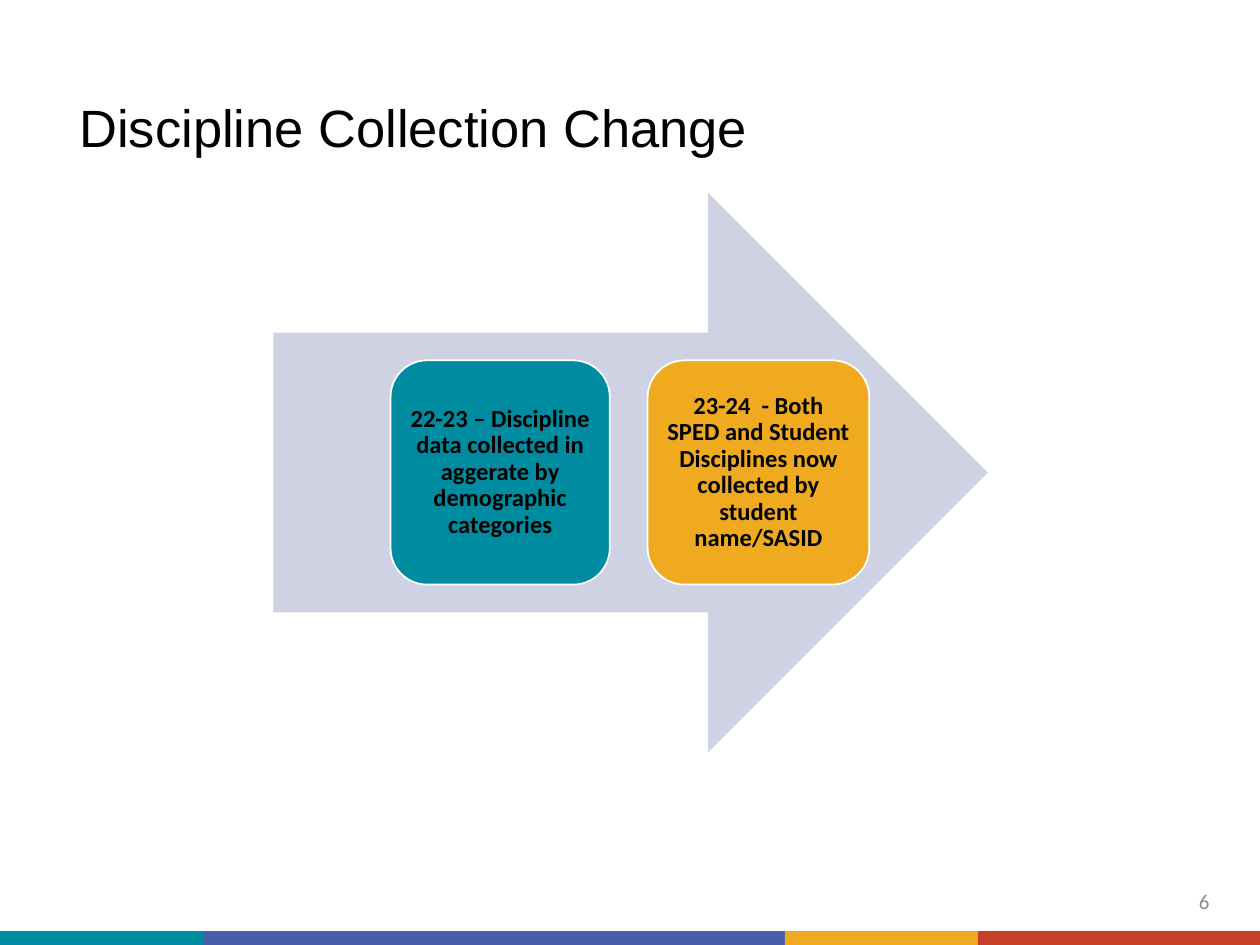
from pptx import Presentation
from pptx import util as u
from pptx.dml.color import RGBColor
from pptx.enum import shapes, text

WIDTH, HEIGHT = 10, 7.5
TITLE = "Discipline Collection Change"
PAGE_NUMBER = "6"
ARROW = (2.17, 1.53, 5.67, 4.44)
CARD_TOP, CARD_HEIGHT = 2.86, 1.78
CARDS = [
    ("22-23 – Discipline data collected in aggerate by demographic categories",
     "008CA0", 3.1, 1.74),
    ("23-24  - Both SPED and Student Disciplines now collected by student name/SASID",
     "EFAA1F", 5.14, 1.76),
]
FOOTER_HEIGHT = 0.11
FOOTER = [("008CA0", 1.61), ("455FA9", 4.62), ("EFAA1F", 1.53), ("C63F28", 2.24)]


def color(value):
    return RGBColor.from_string(value)


def add_block(page, kind, area, fill, line=None):
    block = page.shapes.add_shape(kind, *map(u.Inches, area))
    block.shadow.inherit = False
    block.fill.solid()
    block.fill.fore_color.rgb = color(fill)
    if line:
        block.line.color.rgb = color(line)
        block.line.width = u.Pt(1)
    else:
        block.line.fill.background()
    return block


def write(box, words, size, font, ink, align, anchor, inset, spacing=1.0, bold=False):
    frame = box.text_frame
    frame.text = words
    frame.word_wrap = True
    frame.vertical_anchor = anchor
    frame.margin_left = frame.margin_right = u.Inches(inset)
    frame.margin_top = frame.margin_bottom = u.Inches(inset)
    para = frame.paragraphs[0]
    para.alignment = align
    para.line_spacing = spacing
    span = para.runs[0]
    span.font.size = u.Pt(size)
    span.font.name = font
    span.font.bold = bold
    span.font.color.rgb = color(ink)


def add_text(page, area, *style, **options):
    write(page.shapes.add_textbox(*map(u.Inches, area)), *style, **options)


def main():
    deck = Presentation()
    deck.slide_width, deck.slide_height = u.Inches(WIDTH), u.Inches(HEIGHT)
    page = deck.slides.add_slide(deck.slide_layouts[6])
    shape, align, anchor = shapes.MSO_SHAPE, text.PP_ALIGN, text.MSO_ANCHOR

    left = 0
    for fill, width in FOOTER:
        area = (left, HEIGHT - FOOTER_HEIGHT, width, FOOTER_HEIGHT)
        add_block(page, shape.RECTANGLE, area, fill)
        left += width

    add_text(page, (0.56, 0.62, 7.24, 0.71), TITLE, 30, "Arial", "000000",
             align.LEFT, anchor.BOTTOM, 0.07, spacing=0.9)

    add_block(page, shape.RIGHT_ARROW, ARROW, "CFD2E2")
    for words, fill, left, width in CARDS:
        card = add_block(page, shape.ROUNDED_RECTANGLE,
                         (left, CARD_TOP, width, CARD_HEIGHT), fill, "FFFFFF")
        write(card, words, 14, "Calibri", "000000", align.CENTER, anchor.MIDDLE,
              0.06, spacing=0.9, bold=True)

    add_text(page, (9.42, 6.95, 0.25, 0.4), PAGE_NUMBER, 12, "Calibri", "8C8C8C",
             align.RIGHT, anchor.MIDDLE, 0.07)
    deck.save("out.pptx")


if __name__ == "__main__":
    main()
